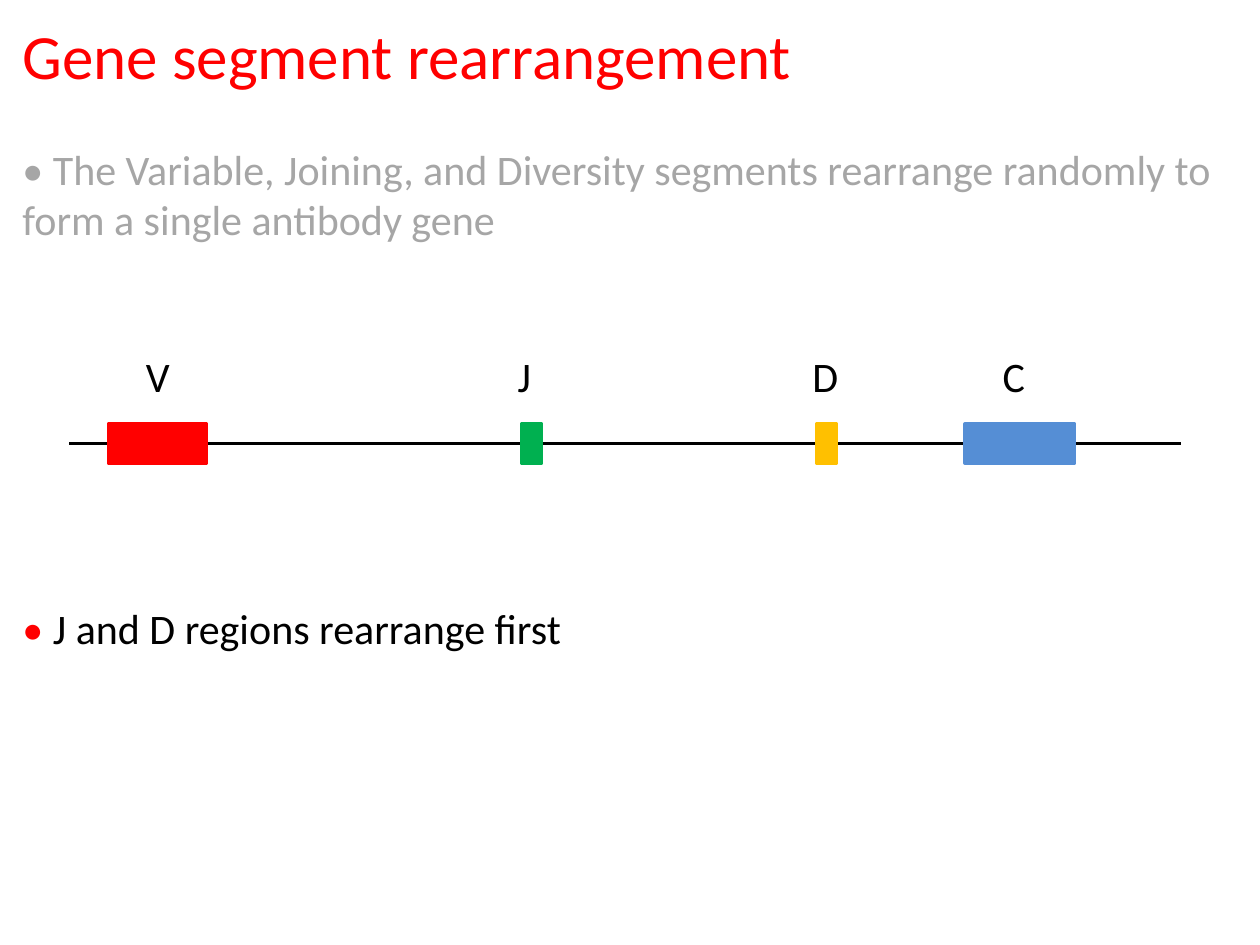
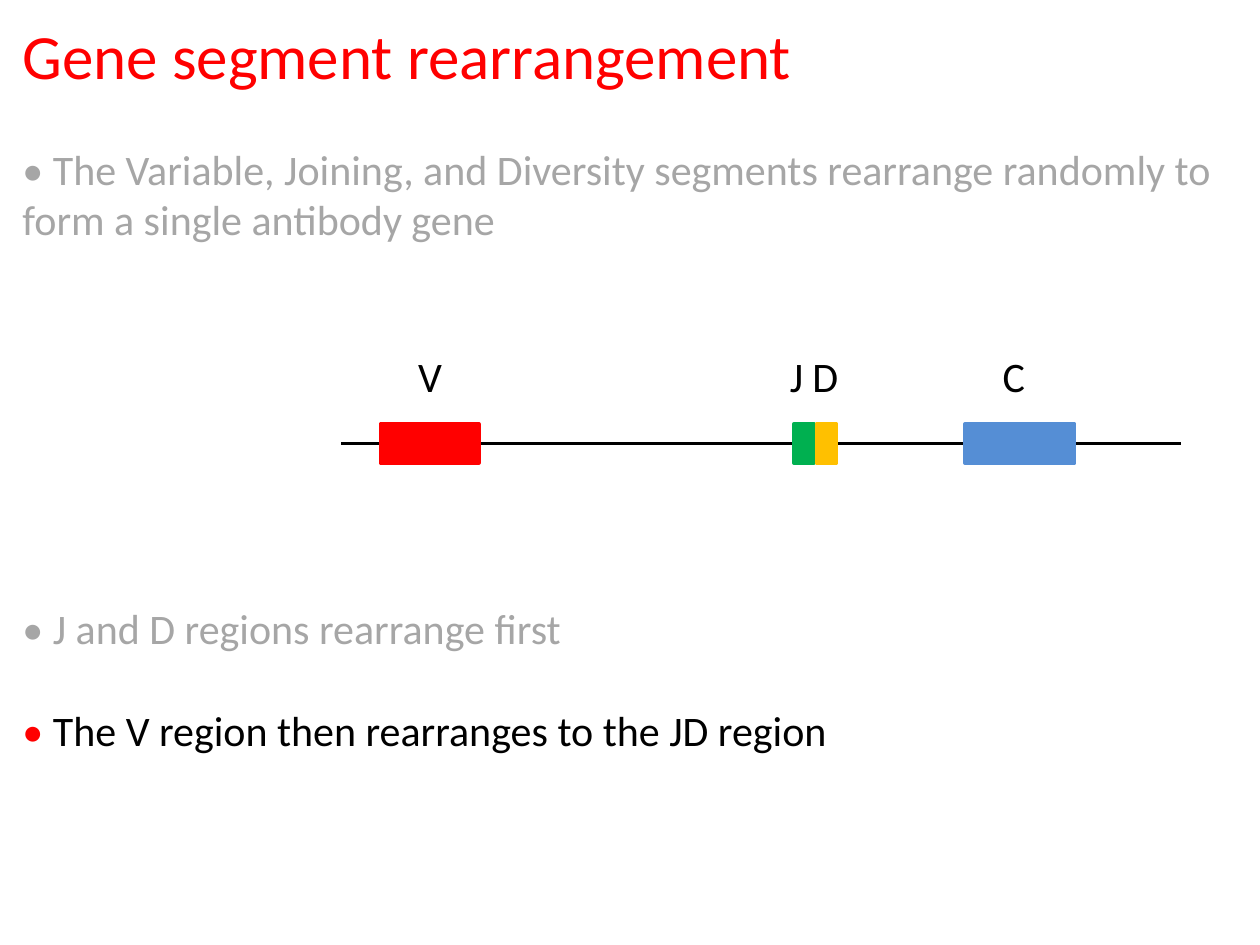
from dataclasses import dataclass

from lxml.etree import SubElement
from pptx import Presentation
from pptx.dml.color import RGBColor as RGB
from pptx.enum.shapes import MSO_CONNECTOR as CONNECTOR, MSO_SHAPE as SHAPE
from pptx.enum.text import MSO_ANCHOR as ANCHOR
from pptx.oxml.ns import qn
from pptx.util import Inches, Pt

TITLE = "Gene segment rearrangement"
POINTS = [
    "The Variable, Joining, and Diversity segments rearrange randomly to form a single antibody gene",
    "J and D regions rearrange first",
    "The V region then rearranges to the JD region",
]
BLANK_LINES_BEFORE = [1, 7, 1]

SEGMENTS = {
    "V": dict(color="FF0000", width=0.78, label_shift=0.2, label_width=0.42, strand=(-0.31, 2.24)),
    "J": dict(color="00B050", width=0.16, label_shift=-0.13, label_width=0.37, strand=(-1.41, 2.33)),
    "D": dict(color="FFC000", width=0.16, label_shift=-0.13, label_width=0.44, strand=None),
    "C": dict(color="558ED5", width=0.87, label_shift=0.2, label_width=0.44, strand=(-2.7, 4.41)),
}

STAGES = [
    dict(points=2, lefts=dict(V=0.86, J=4.14, D=6.48, C=7.66)),
    dict(points=3, lefts=dict(V=3.02, J=6.3, D=6.48, C=7.66)),
]

GENE_AXIS = 3.52
SEGMENT_HEIGHT = 0.31
LABEL_TOP, LABEL_HEIGHT = 2.73, 0.5
STORY_AREA = (0.08, 0.08, 9.92, 7.37)


@dataclass(frozen=True)
class Theme:
    font: str = "Calibri"
    title_size: int = 36
    body_size: int = 24
    line_height: float = 29.3
    accent: str = "FF0000"
    faded: str = "A6A6A6"
    ink: str = "000000"
    strand_weight: float = 2.25
    outline_weight: float = 2


THEME = Theme()


def apply(target, formats):
    for name, value in formats.items():
        setattr(target, name, value)


def write(paragraph, words, color, size=THEME.body_size):
    run = paragraph.add_run()
    run.text = words
    apply(run.font, dict(name=THEME.font, size=Pt(size)))
    run.font.color.rgb = RGB.from_string(color)


def add_text_frame(slide, area, wrap):
    frame = slide.shapes.add_textbox(*map(Inches, area)).text_frame
    apply(frame, dict(word_wrap=wrap, vertical_anchor=ANCHOR.TOP))
    return frame


def add_story(slide, points):
    story = add_text_frame(slide, STORY_AREA, True)
    write(story.paragraphs[0], TITLE, THEME.accent, THEME.title_size)
    for point, blank_lines in zip(points, BLANK_LINES_BEFORE):
        paragraph = story.add_paragraph()
        paragraph.space_before = Pt(blank_lines * THEME.line_height)
        if point == points[-1]:
            write(paragraph, "•", THEME.accent)
            write(paragraph, f" {point}", THEME.ink)
        else:
            write(paragraph, f"• {point}", THEME.faded)


def add_strand(slide, start, length):
    strand = slide.shapes.add_connector(
        CONNECTOR.STRAIGHT,
        *map(Inches, (start, GENE_AXIS, start + length, GENE_AXIS)))
    strand.line.color.rgb = RGB.from_string(THEME.ink)
    strand.line.width = Pt(THEME.strand_weight)
    SubElement(strand._element.spPr, qn("a:effectLst"))


def add_segment(slide, letter, left):
    segment = SEGMENTS[letter]
    color = RGB.from_string(segment["color"])
    block = slide.shapes.add_shape(
        SHAPE.RECTANGLE,
        *map(Inches, (left, GENE_AXIS - SEGMENT_HEIGHT / 2, segment["width"], SEGMENT_HEIGHT)))
    block.shadow.inherit = False
    block.fill.solid()
    block.fill.fore_color.rgb = color
    block.line.color.rgb = color
    block.line.width = Pt(THEME.outline_weight)
    label = add_text_frame(
        slide,
        (left + segment["label_shift"], LABEL_TOP, segment["label_width"], LABEL_HEIGHT),
        False)
    write(label.paragraphs[0], letter, THEME.ink)


def add_gene(slide, lefts):
    for letter, left in lefts.items():
        if SEGMENTS[letter]["strand"]:
            shift, length = SEGMENTS[letter]["strand"]
            add_strand(slide, left + shift, length)
    for letter, left in lefts.items():
        add_segment(slide, letter, left)


def main():
    deck = Presentation()
    apply(deck, dict(slide_width=Inches(10), slide_height=Inches(7.5)))
    for stage in STAGES:
        slide = deck.slides.add_slide(deck.slide_layouts[6])
        add_story(slide, POINTS[:stage["points"]])
        add_gene(slide, stage["lefts"])
    deck.save("out.pptx")


if __name__ == "__main__":
    main()
